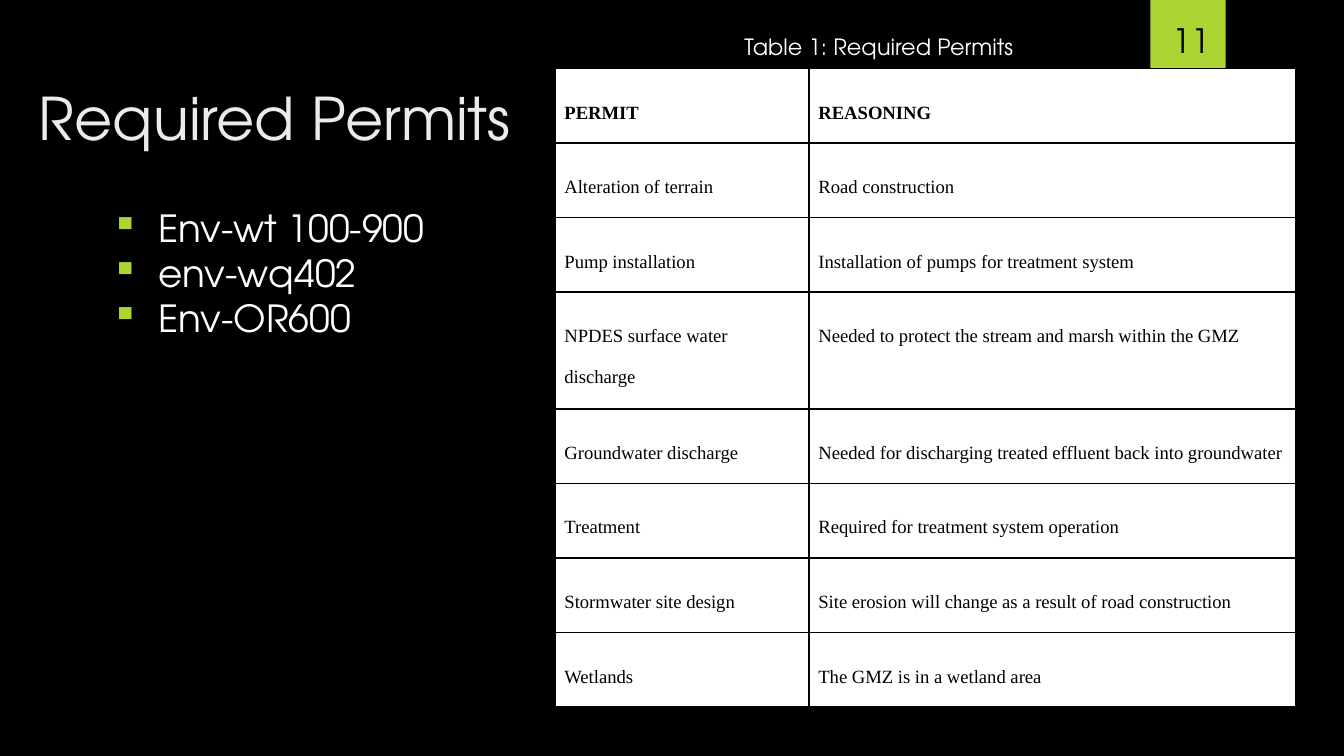
from lxml.etree import SubElement
from pptx import Presentation
from pptx.dml.color import RGBColor
from pptx.enum.shapes import MSO_SHAPE
from pptx.enum.text import MSO_ANCHOR, PP_ALIGN
from pptx.oxml.ns import qn
from pptx.util import Inches, Pt

TITLE = "Required Permits"
RULES = ["Env-wt 100-900", "env-wq402", "Env-OR600"]
CAPTION = "Table 1: Required Permits"
PAGE = "11"
PERMITS = [
    ("PERMIT", "REASONING"),
    ("Alteration of terrain", "Road construction"),
    ("Pump installation", "Installation of pumps for treatment system"),
    ("NPDES surface water discharge", "Needed to protect the stream and marsh within the GMZ"),
    ("Groundwater discharge", "Needed for discharging treated effluent back into groundwater"),
    ("Treatment", "Required for treatment system operation"),
    ("Stormwater site design", "Site erosion will change as a result of road construction"),
    ("Wetlands", "The GMZ is in a wetland area"),
]

WIDTH, HEIGHT = 10, 10 * 9 / 16
TABLE_LEFT, TABLE_TOP = 4.13, 0.51
COLUMNS = (1.89, 3.62)
ROW_HEIGHT = 4.44 / len(PERMITS)
BLACK, WHITE, LIME, PALE = "000000", "FFFFFF", "ACD433", "EBEBEB"
SANS, SERIF = "TeX Gyre Adventor", "Times New Roman"


def color(value):
    return RGBColor.from_string(value)


def paint(fill, value):
    fill.solid()
    fill.fore_color.rgb = color(value)


def style(paragraph, value, **font_format):
    for name, setting in font_format.items():
        setattr(paragraph.font, name, setting)
    paragraph.font.color.rgb = color(value)


def add_bullet(paragraph, value):
    properties = paragraph._p.get_or_add_pPr()
    properties.set("marL", str(Inches(0.5)))
    properties.set("indent", str(Inches(-0.35)))
    bullet_color = SubElement(properties, qn("a:buClr"))
    SubElement(bullet_color, qn("a:srgbClr"), val=value)
    SubElement(properties, qn("a:buChar"), char="▪")


def add_text(slide, box, lines, size, value, inset=0.1, wrap=True,
             align=PP_ALIGN.LEFT, bullet=None):
    frame = slide.shapes.add_textbox(*map(Inches, box)).text_frame
    layout = {"word_wrap": wrap, "vertical_anchor": MSO_ANCHOR.TOP,
              "margin_left": Inches(0.1), "margin_right": Inches(0.1),
              "margin_top": Inches(inset), "margin_bottom": Inches(inset)}
    for name, setting in layout.items():
        setattr(frame, name, setting)
    frame.text = "\n".join(lines)
    for paragraph in frame.paragraphs:
        paragraph.alignment = align
        if bullet:
            add_bullet(paragraph, bullet)
        style(paragraph, value, name=SANS, size=Pt(size))


def add_borders(cell, value):
    properties = cell._tc.get_or_add_tcPr()
    for side in ("lnL", "lnR", "lnT", "lnB"):
        line = SubElement(properties, qn(f"a:{side}"), w=str(Pt(1)))
        fill = SubElement(line, qn("a:solidFill"))
        SubElement(fill, qn("a:srgbClr"), val=value)


def add_permit_table(slide):
    table = slide.shapes.add_table(
        len(PERMITS), len(COLUMNS), Inches(TABLE_LEFT), Inches(TABLE_TOP),
        Inches(sum(COLUMNS)), Inches(ROW_HEIGHT * len(PERMITS))).table
    for column, width in zip(table.columns, COLUMNS):
        column.width = Inches(width)
    margins = {"margin_left": 0.07, "margin_right": 0.07,
               "margin_top": 0.1, "margin_bottom": 0.1}
    for row, permit in enumerate(PERMITS):
        table.rows[row].height = Inches(ROW_HEIGHT)
        for column, wording in enumerate(permit):
            cell = table.cell(row, column)
            for name, margin in margins.items():
                setattr(cell, name, Inches(margin))
            add_borders(cell, BLACK)
            paint(cell.fill, WHITE)
            cell.text = wording
            paragraph = cell.text_frame.paragraphs[0]
            paragraph.line_spacing = 2.0
            style(paragraph, BLACK, name=SERIF, size=Pt(10), bold=row == 0)


def main():
    deck = Presentation()
    deck.slide_width, deck.slide_height = Inches(WIDTH), Inches(HEIGHT)
    slide = deck.slides.add_slide(deck.slide_layouts[6])
    paint(slide.background.fill, BLACK)

    badge = slide.shapes.add_shape(
        MSO_SHAPE.RECTANGLE, *map(Inches, (8.56, 0, 0.56, 0.94)))
    badge.shadow.inherit = False
    paint(badge.fill, LIME)
    badge.line.fill.background()

    add_text(slide, (0.19, 0.51, 9.32, 0.63), [TITLE], 31.5, PALE)
    add_permit_table(slide)
    add_text(slide, (0.58, 1.43, 3.67, 2.9), RULES, 20, WHITE, bullet=LIME)
    label = {"inset": 0.05, "wrap": False, "align": PP_ALIGN.CENTER}
    add_text(slide, (8.62, 0.1, 0.49, 0.4), [PAGE], 18, BLACK, **label)
    add_text(slide, (5.42, 0.2, 2.24, 0.3), [CAPTION], 12, WHITE, **label)
    deck.save("out.pptx")


if __name__ == "__main__":
    main()
